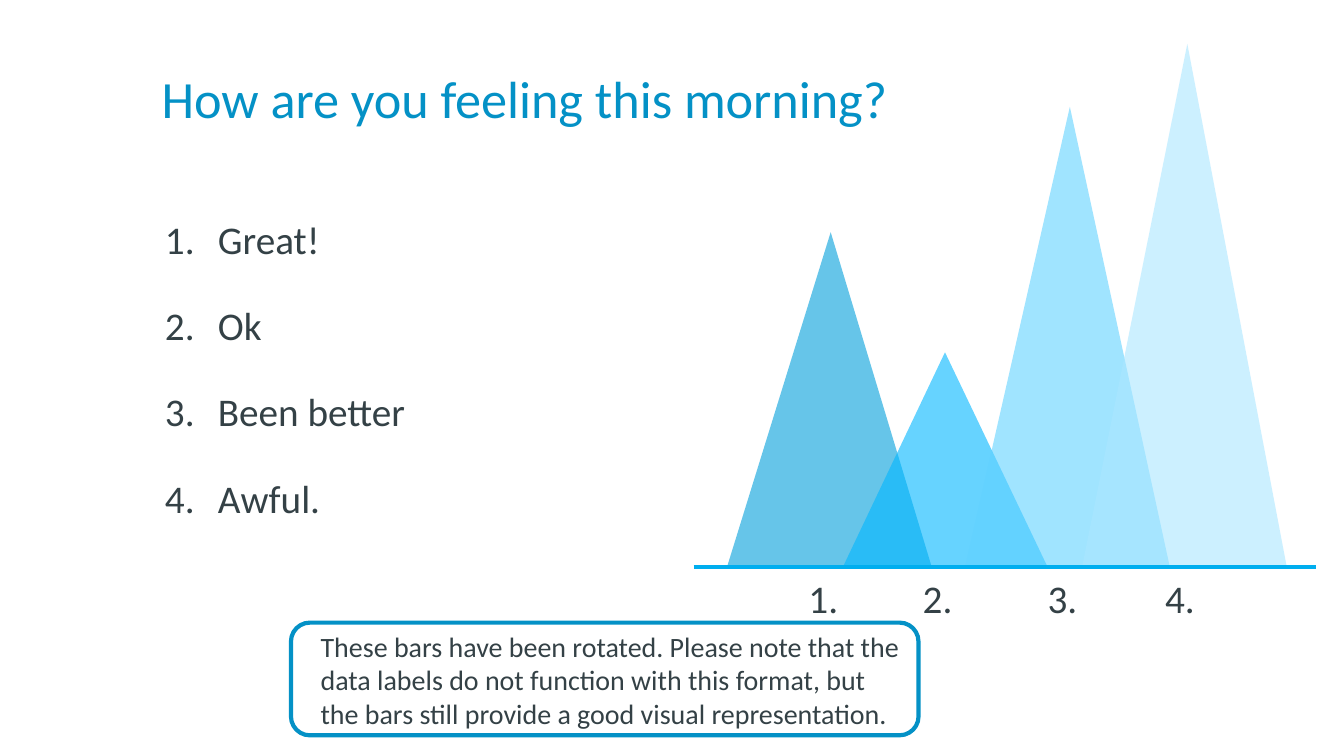
from lxml.etree import SubElement as Sub
from pptx import Presentation
from pptx.dml.color import RGBColor
from pptx.enum.shapes import MSO_CONNECTOR as Link, MSO_SHAPE as Shape
from pptx.enum.text import MSO_ANCHOR as Anchor, MSO_AUTO_SIZE as Fit, PP_ALIGN as Align
from pptx.oxml.ns import qn
from pptx.util import Cm, Pt

INK, BLUE, LINE = "344146", "0491C6", "00AEEF"
BASE, WIDE = 10.72, 3.87
PEAKS = [
    (13.74, 15.70, 4.39, "009FDB"),
    (15.93, 17.86, 6.66, "01B6FF"),
    (18.24, 20.22, 2.02, "61D2FF"),
    (20.45, 22.44, 0.83, "ABE7FF"),
]
ANSWERS = [("Great!", 2.69), ("Ok", 4.09), ("Been better", 3.89), ("Awful.", 3.89)]
NOTE = (
    "These bars have been rotated. Please note that the data labels do not function "
    "with this format, but the bars still provide a good visual representation."
)


def tint(code):
    """Turn a hex string into a colour."""
    return RGBColor.from_string(code)


def write(box, text, size=21, color=INK, align=Align.LEFT, pads=None, wrap=True, fit=Fit.NONE):
    """Put formatted text into a shape."""
    frame = box.text_frame
    frame.word_wrap, frame.auto_size = wrap, fit
    frame.vertical_anchor = Anchor.TOP
    if pads:
        (frame.margin_left, frame.margin_top,
         frame.margin_right, frame.margin_bottom) = map(Cm, pads)
    frame.text = text
    para = frame.paragraphs[0]
    para.alignment = align
    font = para.font
    font.name, font.size = "Calibri", Pt(size)
    font.color.rgb = tint(color)


def label(shapes, text, left, top, wide, high, **form):
    """Add a text box."""
    box = shapes.add_textbox(Cm(left), Cm(top), Cm(wide), Cm(high))
    write(box, text, fit=Fit.SHAPE_TO_FIT_TEXT, **form)


def number(shapes, num, left, top, align, right):
    """Add a numeral with its dot."""
    label(shapes, f"{num}.", left, top, 1.19, 1.02,
          align=align, pads=(0.1, 0.1, right, 0), wrap=False)


def peak(shapes, left, tip, top, color):
    """Add a see-through triangle that stands on the base line."""
    pen = shapes.build_freeform(Cm(left + WIDE), Cm(BASE))
    pen.add_line_segments([(Cm(left), Cm(BASE)), (Cm(tip), Cm(top))], close=True)
    form = pen.convert_to_shape()
    form.shadow.inherit = False
    form.fill.solid()
    form.fill.fore_color.rgb = tint(color)
    form.line.fill.background()
    hue = form.element.spPr.find(".//" + qn("a:srgbClr"))
    Sub(hue, qn("a:alpha"), val="60000")


def axis(shapes):
    """Add the base line."""
    rule = shapes.add_connector(Link.STRAIGHT, Cm(13.11), Cm(BASE), Cm(24.87), Cm(BASE))
    rule.line.color.rgb = tint(LINE)
    rule.line.width = Pt(2)
    Sub(rule.element.spPr, qn("a:effectLst"))


def note(shapes):
    """Add the framed note as a group."""
    group = shapes.add_group_shape().shapes
    frame = group.add_shape(Shape.ROUNDED_RECTANGLE, Cm(5.5), Cm(11.77), Cm(11.86), Cm(2.13))
    frame.shadow.inherit = False
    frame.fill.background()
    frame.line.color.rgb = tint(BLUE)
    frame.line.width = Pt(2.25)
    label(group, NOTE, 5.81, 11.77, 11.56, 1.8, size=15)


def main():
    """Build the slide."""
    deck = Presentation()
    deck.slide_width, deck.slide_height = Cm(25.4), Cm(14.29)
    shapes = deck.slides.add_slide(deck.slide_layouts[5]).shapes
    title = shapes.title
    title.left, title.top, title.width, title.height = map(Cm, (2.8, 1.12, 21.89, 2.77))
    write(title, "How are you feeling this morning?", size=28, color=BLUE)
    for row in PEAKS:
        peak(shapes, *row)
    axis(shapes)
    for num, (_, tip, _, _) in enumerate(PEAKS, 1):
        number(shapes, num, tip - 0.62, 10.75, Align.CENTER, 0.33)
    note(shapes)
    for num, (text, wide) in enumerate(ANSWERS, 1):
        top = 3.97 + 1.63 * (num - 1)
        number(shapes, num, 2.92, top, Align.RIGHT, 0.43)
        label(shapes, text, 4.12, top, wide, 1.07, pads=(0, 0.1, 0, 0.05))
    deck.save("out.pptx")


if __name__ == "__main__":
    main()
